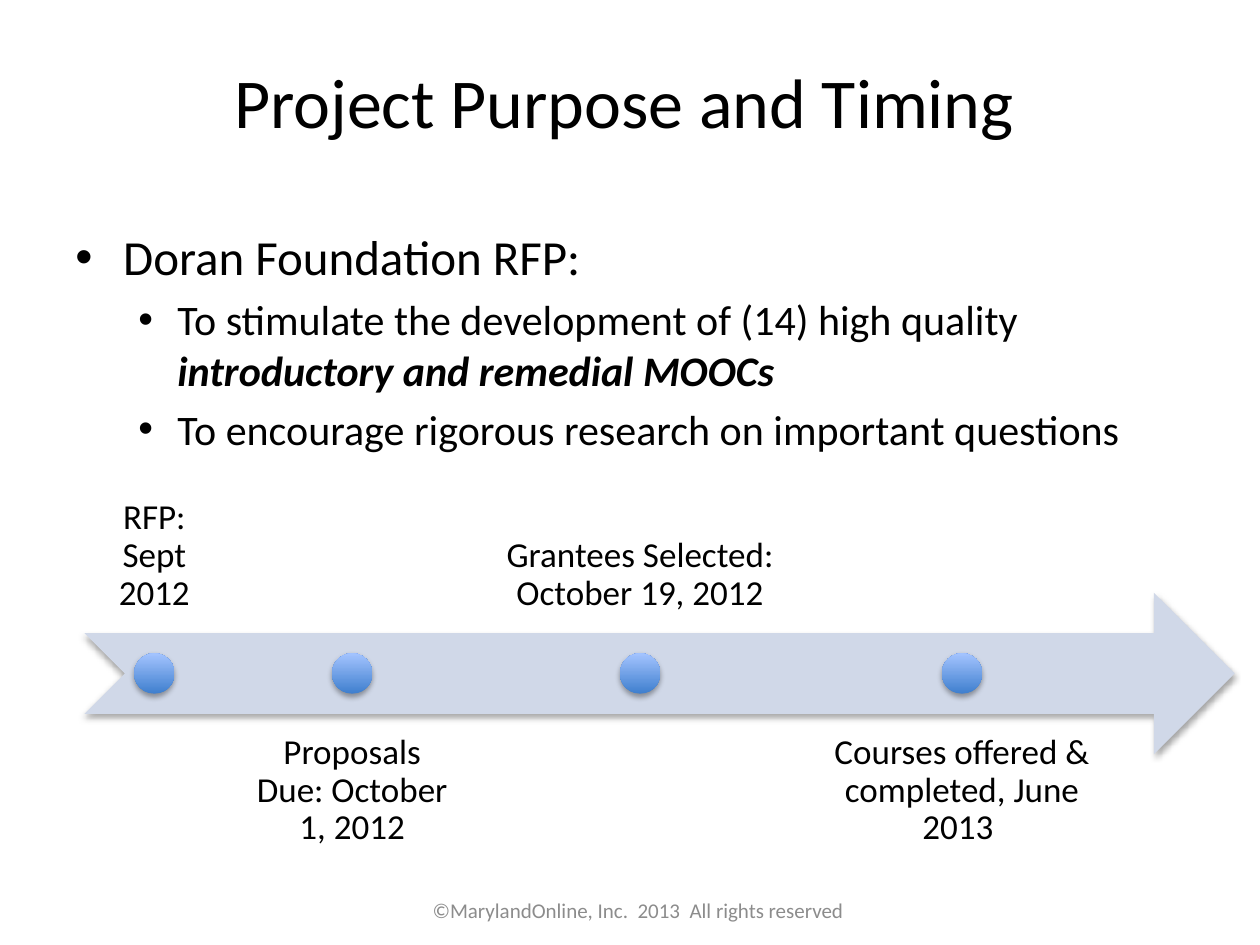
from lxml import etree
from pptx import Presentation
from pptx.dml.color import RGBColor
from pptx.enum.shapes import MSO_SHAPE
from pptx.enum.text import MSO_ANCHOR, PP_ALIGN
from pptx.oxml.ns import qn
from pptx.util import Inches, Pt

TOP, MIDDLE, BOTTOM = MSO_ANCHOR.TOP, MSO_ANCHOR.MIDDLE, MSO_ANCHOR.BOTTOM
LEFT, CENTER = PP_ALIGN.LEFT, PP_ALIGN.CENTER
ARROW, DOT = MSO_SHAPE.NOTCHED_RIGHT_ARROW, MSO_SHAPE.OVAL

# Content
TITLE = "Project Purpose and Timing"
PLAIN, STRONG = {}, {"bold": True, "italic": True}
BULLETS = [  # level, runs
    (0, [("Doran Foundation RFP:", PLAIN)]),
    (1, [("To stimulate the development of (14) high quality ", PLAIN),
         ("introductory and remedial MOOCs", STRONG)]),
    (1, [("To encourage rigorous research on important questions", PLAIN)]),
]
MILESTONES = [  # label, left, width; labels alternate above and below the arrow
    ("RFP: Sept 2012", 0.67, 1.11),
    ("Proposals Due: October 1, 2012", 1.82, 1.95),
    ("Grantees Selected: October 19, 2012", 3.82, 2.52),
    ("Courses offered & completed, June 2013 ", 6.38, 2.51),
]
FOOTER = "©MarylandOnline, Inc.  2013  All rights reserved"

# Format
COLORS = {"text": "000000", "footer": "8C8C8C", "arrow": "D0D8E8",
          "dot_bottom": "3F7FCE", "dot_top": "A4C4FF", "shadow": "000000"}
LEVELS = [  # size, indent, hanging, space before
    {"size": 28, "indent": 0.38, "hanging": 0.38, "before": 0},
    {"size": 24, "indent": 0.81, "hanging": 0.31, "before": 4.8},
]
SLIDE_WIDTH, SLIDE_HEIGHT = 10, 7.5
TIMELINE = {"left": 0.67, "top": 3.74, "width": 9.13, "height": 3.21}
BAND = TIMELINE["height"] * 0.4
DOT_SIZE = BAND / 4
LABEL_INSET = 0.16


def color(name):
    return RGBColor.from_string(COLORS[name])


def add_run(paragraph, text, size, color_name="text", **style):
    run = paragraph.add_run()
    run.text = text
    run.font.color.rgb = color(color_name)
    for key, value in {"name": "Calibri", "size": Pt(size), **style}.items():
        setattr(run.font, key, value)


def add_box(slide, box, anchor=TOP, inset=None):
    frame = slide.shapes.add_textbox(*map(Inches, box)).text_frame
    frame.word_wrap = True
    frame.vertical_anchor = anchor
    if inset is not None:
        for side in ("left", "right", "top", "bottom"):
            setattr(frame, "margin_" + side, Inches(inset))
    return frame


def add_line(frame, text, size, alignment, color_name="text"):
    paragraph = frame.paragraphs[0]
    paragraph.alignment = alignment
    add_run(paragraph, text, size, color_name)
    return paragraph


def add_bullet(paragraph, indent, hanging):
    properties = paragraph._p.get_or_add_pPr()
    properties.set("marL", str(Inches(indent)))
    properties.set("indent", str(-Inches(hanging)))
    etree.SubElement(properties, qn("a:buFont")).set("typeface", "Arial")
    etree.SubElement(properties, qn("a:buChar")).set("char", "•")


def add_shadowed(slide, kind, box):
    shape = slide.shapes.add_shape(kind, *map(Inches, box))
    shape.line.fill.background()
    shape.shadow.inherit = False
    effects = shape._element.spPr.find(qn("a:effectLst"))
    shadow = etree.SubElement(effects, qn("a:outerShdw"), {
        "blurRad": str(Pt(3.1)), "dist": str(Pt(1.8)),
        "dir": "5400000", "rotWithShape": "0"})
    tint = etree.SubElement(shadow, qn("a:srgbClr"), val=COLORS["shadow"])
    etree.SubElement(tint, qn("a:alpha"), val="35000")
    return shape


def add_bullets(slide):
    frame = add_box(slide, (0.5, 1.75, SLIDE_WIDTH * 0.9, 4.95))
    for index, (level, runs) in enumerate(BULLETS):
        paragraph = frame.add_paragraph() if index else frame.paragraphs[0]
        style = LEVELS[level]
        paragraph.level = level
        paragraph.space_before = Pt(style["before"])
        add_bullet(paragraph, style["indent"], style["hanging"])
        for text, emphasis in runs:
            add_run(paragraph, text, style["size"], **emphasis)


def add_timeline(slide):
    top, height = TIMELINE["top"], TIMELINE["height"]
    arrow_top = top + (height - BAND) / 2
    arrow = add_shadowed(slide, ARROW, (TIMELINE["left"], arrow_top, TIMELINE["width"], BAND))
    arrow.fill.solid()
    arrow.fill.fore_color.rgb = color("arrow")

    for index, (text, left, width) in enumerate(MILESTONES):
        below = index % 2
        label_top = top + height - BAND if below else top
        frame = add_box(slide, (left, label_top, width, BAND),
                        TOP if below else BOTTOM, LABEL_INSET)
        add_line(frame, text, 20, CENTER).line_spacing = 0.9

        dot = add_shadowed(slide, DOT, (left + (width - DOT_SIZE) / 2,
                                        arrow_top + (BAND - DOT_SIZE) / 2,
                                        DOT_SIZE, DOT_SIZE))
        dot.fill.gradient()
        dot.fill.gradient_angle = 90
        for stop, name in zip(dot.fill.gradient_stops, ("dot_bottom", "dot_top")):
            stop.color.rgb = color(name)


def main():
    presentation = Presentation()
    presentation.slide_width = Inches(SLIDE_WIDTH)
    presentation.slide_height = Inches(SLIDE_HEIGHT)
    slide = presentation.slides.add_slide(presentation.slide_layouts[6])

    # Title, bullets, footer, timeline
    add_line(add_box(slide, (1.76, 0.19, 8.04, 0.99), BOTTOM), TITLE, 40, LEFT)
    add_bullets(slide)
    add_line(add_box(slide, (2.67, 6.95, 4.79, 0.54), MIDDLE), FOOTER, 12, CENTER, "footer")
    add_timeline(slide)
    presentation.save("out.pptx")


if __name__ == "__main__":
    main()
